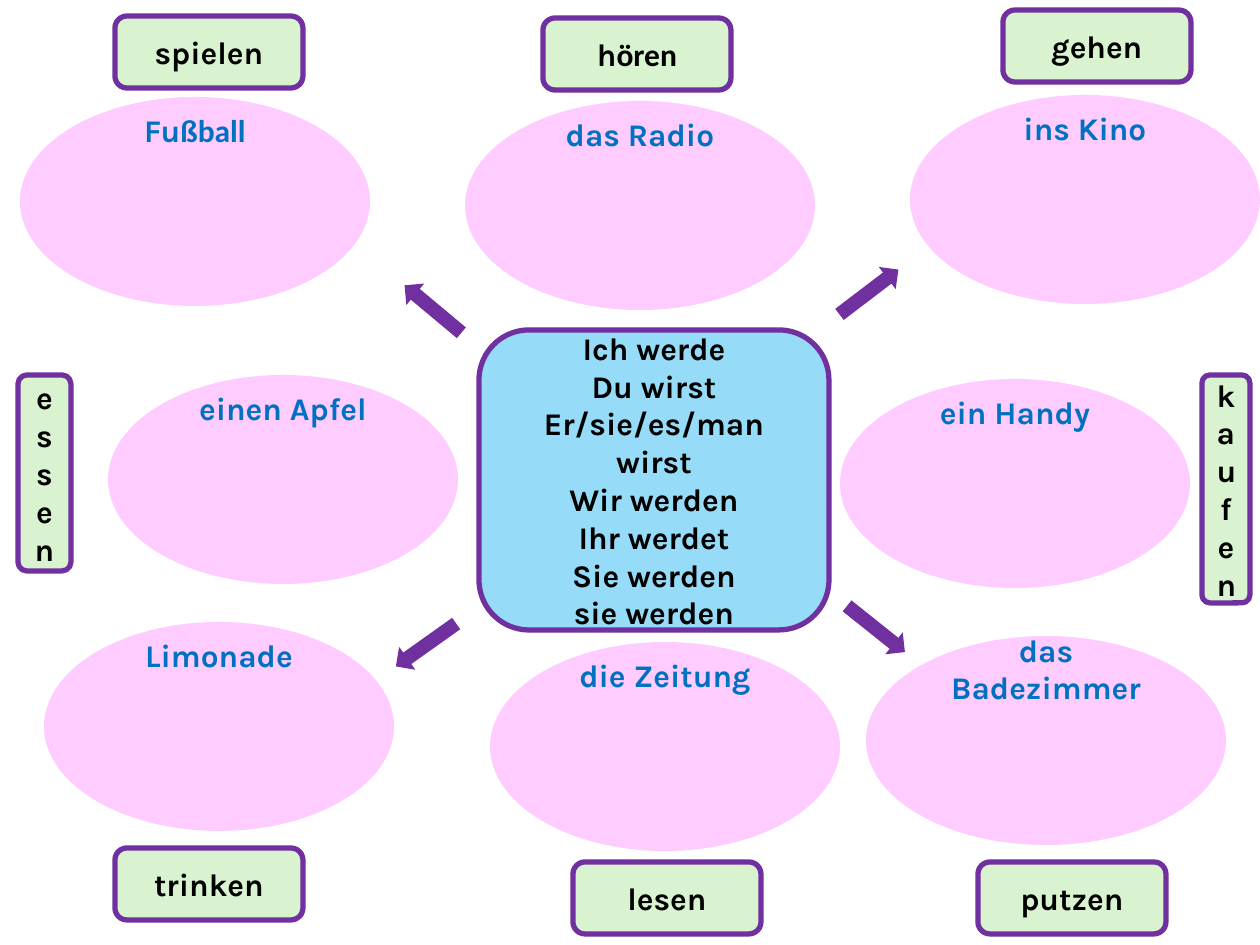
import pptx
import pptx.util
import pptx.dml.color
import pptx.enum.shapes
import pptx.enum.text

KIND = pptx.enum.shapes.MSO_SHAPE
SCALE = 914400 // 126
COLORS = {
    "purple": "7030A0",
    "sky": "96DCF8",
    "green": "D9F2D0",
    "pink": "FFCCFF",
    "blue": "0070C0",
    "black": "000000",
}
TEXT = ("Ich werde", "Du wirst", "Er/sie/es/man wirst", "Wir werden",
        "Ihr werdet", "Sie werden", "sie werden")
VERB_W, VERB_H = 188, 72
NOUN_W, NOUN_H = 350, 209
ARROW_W, ARROW_H = 74, 28

# text, left, top; a bar marks where the font changes to Calibri
VERBS = [
    ("spielen", 115, 16), ("h|ören", 543, 18), ("gehen", 1003, 10),
    ("trinken", 115, 848), ("lesen", 573, 862), ("putzen", 978, 862),
]
# text, left, top, width, height
TALL = [("essen", 18, 375, 53, 196), ("kaufen", 1202, 375, 48, 228)]
NOUNS = [
    ("Fu|ßball", 20, 97, NOUN_W), ("das Radio", 465, 101, NOUN_W),
    ("ins Kino", 910, 95, NOUN_W), ("einen Apfel", 108, 375, NOUN_W),
    ("ein Handy", 840, 379, NOUN_W), ("Limonade", 44, 622, NOUN_W),
    ("die Zeitung", 490, 642, NOUN_W), ("das Badezimmer", 866, 636, 360),
]
# left, top, turn in degrees
ARROWS = [(832, 278, 322.7), (396, 295, 219.9),
          (389, 631, 144.6), (839, 615, 38.6)]


def px(n):
    return pptx.util.Emu(n * SCALE)


def rgb(name):
    return pptx.dml.color.RGBColor.from_string(COLORS[name])


def add_shape(slide, kind, box, fill, edge=None):
    shape = slide.shapes.add_shape(kind, *map(px, box))
    shape.shadow.inherit = False
    shape.fill.solid()
    shape.fill.fore_color.rgb = rgb(fill)
    if edge:
        shape.line.color.rgb = rgb(edge)
        shape.line.width = pptx.util.Pt(3)
    else:
        shape.line.fill.background()
    return shape


def write(shape, lines, color):
    """Centre bold lines; what follows a bar is set in Calibri."""
    frame = shape.text_frame
    frame.word_wrap = True
    frame.vertical_anchor = pptx.enum.text.MSO_ANCHOR.MIDDLE
    for i, line in enumerate(lines):
        para = frame.add_paragraph() if i else frame.paragraphs[0]
        para.alignment = pptx.enum.text.PP_ALIGN.CENTER
        for part, face in zip(line.split("|"), ("Karla", "Calibri")):
            run = para.add_run()
            run.text = part
            run.font.name = face
            run.font.size = pptx.util.Pt(18)
            run.font.bold = True
            run.font.color.rgb = rgb(color)


def add_box(slide, lines, box, fill):
    shape = add_shape(slide, KIND.ROUNDED_RECTANGLE, box, fill, "purple")
    write(shape, lines, "black")


def add_noun(slide, text, left, top, width):
    """Ellipse whose bottom margin lifts the text into its upper part."""
    shape = add_shape(slide, KIND.OVAL, (left, top, width, NOUN_H), "pink")
    write(shape, [text], "blue")
    shape.text_frame.margin_top = 0
    shape.text_frame.margin_bottom = px(144)


def add_arrow(slide, left, top, turn):
    box = (left, top, ARROW_W, ARROW_H)
    add_shape(slide, KIND.RIGHT_ARROW, box, "purple").rotation = turn


def main():
    deck = pptx.Presentation()
    deck.slide_width, deck.slide_height = px(1260), px(945)
    slide = deck.slides.add_slide(deck.slide_layouts[6])
    add_box(slide, TEXT, (479, 330, 350, 300), "sky")
    for noun in NOUNS:
        add_noun(slide, *noun)
    for text, left, top in VERBS:
        add_box(slide, [text], (left, top, VERB_W, VERB_H), "green")
    for text, *box in TALL:
        add_box(slide, [text], box, "green")
    for arrow in ARROWS:
        add_arrow(slide, *arrow)
    deck.save("out.pptx")


if __name__ == "__main__":
    main()
